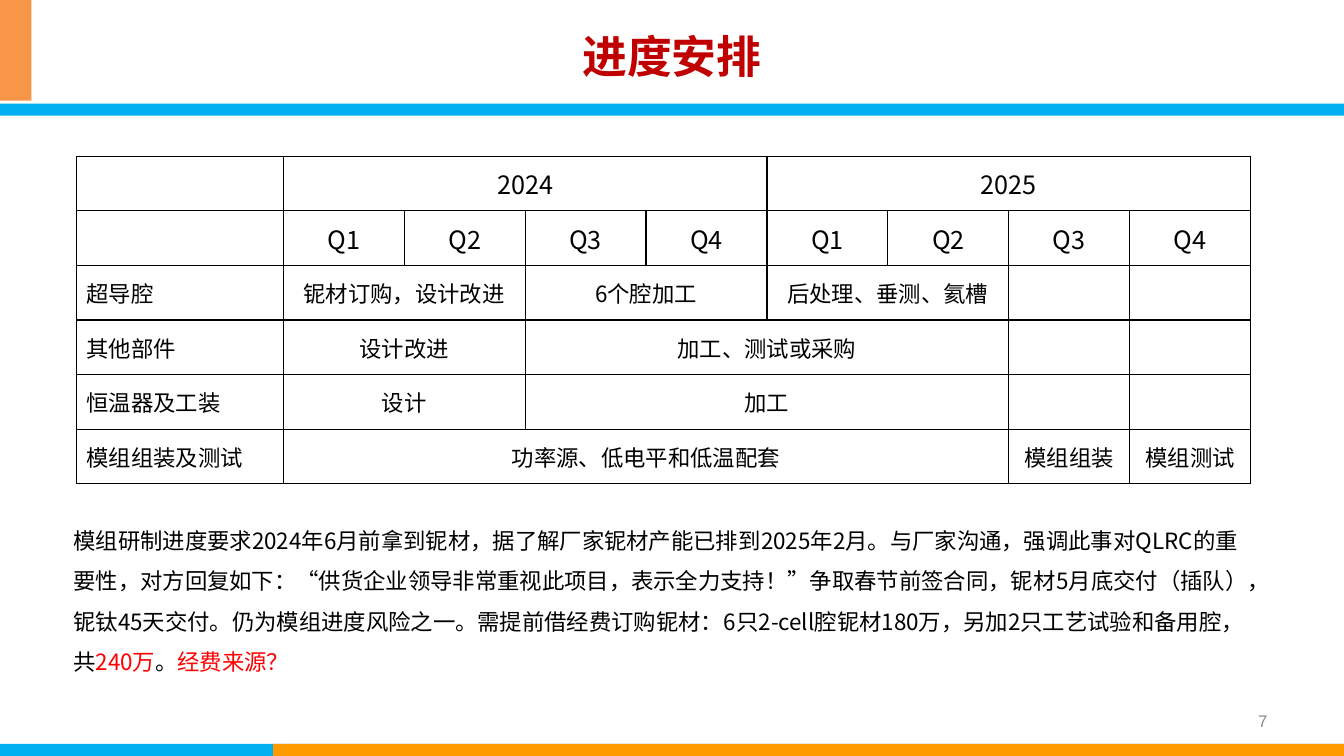
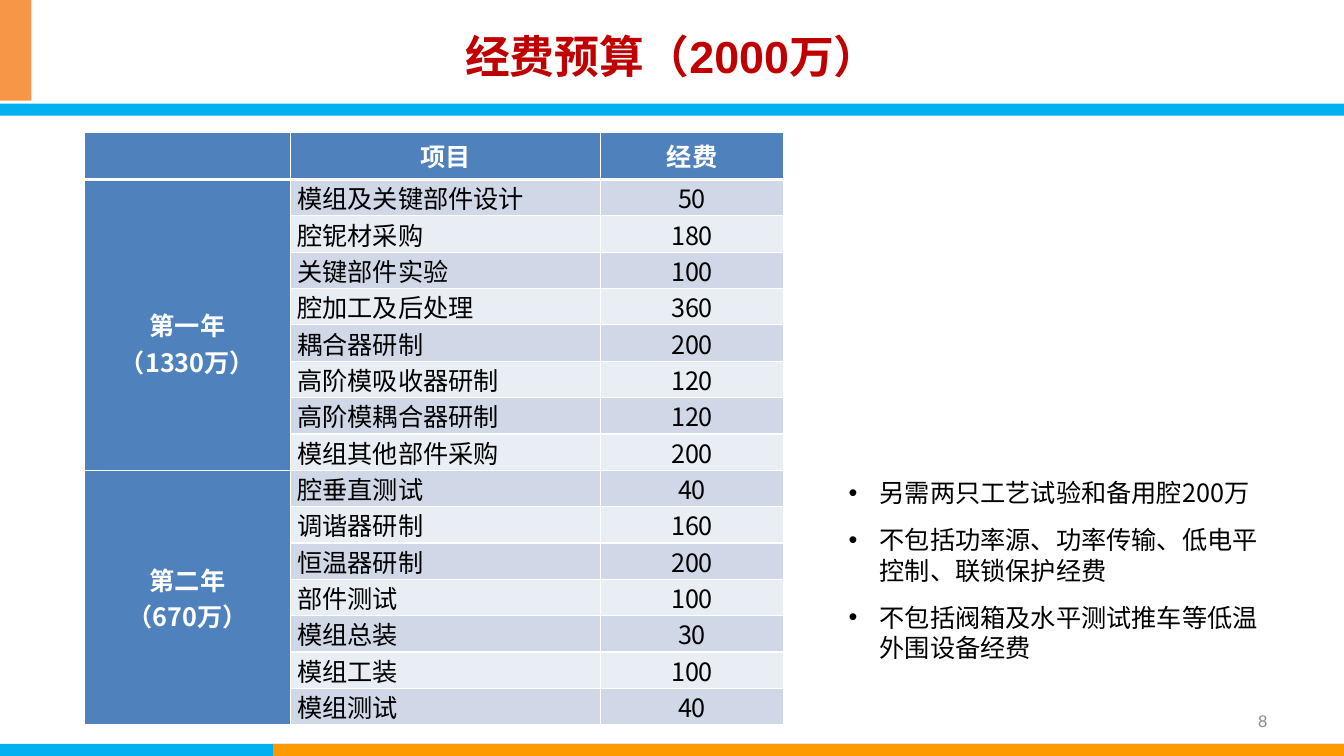
from lxml.etree import SubElement
from pptx import Presentation
from pptx.dml.color import RGBColor
from pptx.enum.shapes import MSO_SHAPE
from pptx.enum.text import MSO_ANCHOR, MSO_AUTO_SIZE, PP_ALIGN
from pptx.oxml import parse_xml
from pptx.oxml.ns import nsdecls, qn
from pptx.util import Inches, Pt

W, H = Inches(13.333), Inches(7.5)
BODY, HEAD = "Noto Sans CJK SC", "Arial"
COLORS = {
    "sky": "00B0F0", "amber": "FF9900", "corner": "F79646",
    "title": "C00000", "page": "8C8C8C", "alert": "FF0000",
    "black": "000000", "white": "FFFFFF",
    "header": "4F81BD", "odd": "D0D8E8", "even": "E9EDF4",
}
# Left, top, width, height in percent of the slide
BANDS = [
    ("sky", (0, 98.4, 100, 1.6)),
    ("amber", (20.33, 98.4, 79.67, 1.6)),
    ("sky", (0, 13.7, 100, 1.6)),
    ("corner", (0, 0, 2.33, 13.33)),
]
TITLE_BOX = (0, 2.13, 100, 10.53)
PAGE_BOX = (71.7, 92.67, 23.33, 5.33)

# Each cell of the schedule is (text, columns spanned)
SCHEDULE = [
    [("", 1), ("2024", 4), ("2025", 4)],
    [("", 1)] + [(f"Q{q}", 1) for q in (1, 2, 3, 4)] * 2,
    [("超导腔", 1), ("铌材订购，设计改进", 2), ("6个腔加工", 2),
     ("后处理、垂测、氦槽", 2), ("", 1), ("", 1)],
    [("其他部件", 1), ("设计改进", 2), ("加工、测试或采购", 4), ("", 1), ("", 1)],
    [("恒温器及工装", 1), ("设计", 2), ("加工", 4), ("", 1), ("", 1)],
    [("模组组装及测试", 1), ("功率源、低电平和低温配套", 6),
     ("模组组装", 1), ("模组测试", 1)],
]
RISK_NOTE = [
    ("模组研制进度要求2024年6月前拿到铌材，据了解厂家铌材产能已排到2025年2月。"
     "与厂家沟通，强调此事对QLRC的重要性，对方回复如下：“供货企业领导非常重视此项目，"
     "表示全力支持！”争取春节前签合同，铌材5月底交付（插队），铌钛45天交付。"
     "仍为模组进度风险之一。需提前借经费订购铌材：6只2-cell腔铌材180万，"
     "另加2只工艺试验和备用腔，共", "black"),
    ("240万", "alert"), ("。", "black"), ("经费来源？", "alert"),
]
BUDGET = {
    "第一年\n（1330万）": [
        ("模组及关键部件设计", 50), ("腔铌材采购", 180), ("关键部件实验", 100),
        ("腔加工及后处理", 360), ("耦合器研制", 200), ("高阶模吸收器研制", 120),
        ("高阶模耦合器研制", 120), ("模组其他部件采购", 200)],
    "第二年\n（670万）": [
        ("腔垂直测试", 40), ("调谐器研制", 160), ("恒温器研制", 200),
        ("部件测试", 100), ("模组总装", 30), ("模组工装", 100), ("模组测试", 40)],
}
EXCLUSIONS = [
    "另需两只工艺试验和备用腔200万",
    "不包括功率源、功率传输、低电平控制、联锁保护经费",
    "不包括阀箱及水平测试推车等低温外围设备经费",
]


def across(percent):
    return round(W * percent / 100)


def down(percent):
    return round(H * percent / 100)


def place(box):
    left, top, width, height = box
    return across(left), down(top), across(width), down(height)


def rgb(name):
    return RGBColor.from_string(COLORS[name])


def style_run(r, size, color="black", bold=False, font=BODY):
    r.font.size, r.font.bold, r.font.name = Pt(size), bold, font
    r.font.color.rgb = rgb(color)
    SubElement(r.font._element, qn("a:ea")).set("typeface", BODY)


def style_text(tf, size, align=PP_ALIGN.LEFT, **look):
    for p in tf.paragraphs:
        p.alignment = align
        for r in p.runs:
            style_run(r, size, **look)


def add_band(s, color, box):
    sp = s.shapes.add_shape(MSO_SHAPE.RECTANGLE, *place(box))
    sp.shadow.inherit = False
    sp.fill.solid()
    sp.fill.fore_color.rgb = rgb(color)
    sp.line.fill.background()


def add_textbox(s, box, text="", anchor=MSO_ANCHOR.TOP):
    tf = s.shapes.add_textbox(*place(box)).text_frame
    tf.word_wrap = True
    tf.vertical_anchor = anchor
    tf.text = text
    return tf


def add_bullet(p):
    pPr = p._p.get_or_add_pPr()
    pPr.set("marL", str(Inches(0.31)))
    pPr.set("indent", str(-Inches(0.31)))
    SubElement(pPr, qn("a:buFont")).set("typeface", HEAD)
    SubElement(pPr, qn("a:buChar")).set("char", "•")


def add_table(s, left, top, cols, rows):
    """Add a plain table; cols and rows are percent of the slide."""
    frame = s.shapes.add_table(
        len(rows), len(cols), *place((left, top, sum(cols), sum(rows))))
    table = frame.table
    table.first_row = table.horz_banding = False
    for column, share in zip(table.columns, cols):
        column.width = across(share)
    for row, share in zip(table.rows, rows):
        row.height = down(share)
    return table


def set_borders(cell, color, top=1, bottom=1):
    tcPr = cell._tc.get_or_add_tcPr()
    widths = {"lnL": 1, "lnR": 1, "lnT": top, "lnB": bottom}
    for i, (side, width) in enumerate(widths.items()):
        tcPr.insert(i, parse_xml(
            f'<a:{side} {nsdecls("a")} w="{Pt(width)}"><a:solidFill>'
            f'<a:srgbClr val="{COLORS[color]}"/></a:solidFill></a:{side}>'))


def fill_budget_cell(cell, text, fill, align=PP_ALIGN.CENTER, **look):
    cell.fill.solid()
    cell.fill.fore_color.rgb = rgb(fill)
    cell.text_frame.text = str(text)
    style_text(cell.text_frame, 18, align, **look)


def new_slide(prs, title, page):
    """Add a slide with the shared bands, title and page number."""
    s = prs.slides.add_slide(prs.slide_layouts[6])
    for color, box in BANDS:
        add_band(s, color, box)
    tf = add_textbox(s, TITLE_BOX, title, MSO_ANCHOR.MIDDLE)
    style_text(tf, 32, PP_ALIGN.CENTER, color="title", bold=True, font=HEAD)
    tf = add_textbox(s, PAGE_BOX, str(page), MSO_ANCHOR.MIDDLE)
    style_text(tf, 12, PP_ALIGN.RIGHT, color="page", font=HEAD)
    return s


def add_schedule(s):
    table = add_table(s, 5.7, 20.67, [15.38] + [9] * 8, [7.22] * len(SCHEDULE))
    for cell in table.iter_cells():
        cell.fill.background()
        set_borders(cell, "black")
        cell.vertical_anchor = MSO_ANCHOR.MIDDLE
    for i, row in enumerate(SCHEDULE):
        j = 0
        for text, span in row:
            cell = table.cell(i, j)
            if span > 1:
                cell.merge(table.cell(i, j + span - 1))
            cell.text_frame.text = text
            style_text(cell.text_frame, 18 if i < 2 else 16,
                       PP_ALIGN.CENTER if j else PP_ALIGN.LEFT)
            j += span


def add_risk_note(s):
    tf = add_textbox(s, (4.73, 67.33, 89.33, 22.27))
    tf.auto_size = MSO_AUTO_SIZE.SHAPE_TO_FIT_TEXT
    p = tf.paragraphs[0]
    p.line_spacing, p.space_after = 1.5, Pt(24)
    for text, color in RISK_NOTE:
        r = p.add_run()
        r.text = text
        style_run(r, 16, color)


def add_budget(s):
    count = sum(len(items) for items in BUDGET.values())
    rows = [6.27] + [4.81] * count
    table = add_table(s, 6.3, 17.47, [15.3, 23.1, 13.58], rows)
    for n, cell in enumerate(table.iter_cells()):
        i = n // 3
        cell.margin_left = cell.margin_right = Inches(0.07)
        cell.margin_top = cell.margin_bottom = 0
        cell.vertical_anchor = MSO_ANCHOR.MIDDLE
        set_borders(cell, "white", top=3 if i == 1 else 1,
                    bottom=1 if i else 3)
    heading = {"fill": "header", "color": "white", "bold": True}
    for j, text in enumerate(("", "项目", "经费")):
        fill_budget_cell(table.cell(0, j), text, **heading)
    i = 1
    for year, items in BUDGET.items():
        cell = table.cell(i, 0)
        cell.merge(table.cell(i + len(items) - 1, 0))
        fill_budget_cell(cell, year, **heading)
        for item, cost in items:
            fill = "odd" if i % 2 else "even"
            fill_budget_cell(table.cell(i, 1), item, fill, PP_ALIGN.JUSTIFY)
            fill_budget_cell(table.cell(i, 2), cost, fill)
            i += 1
    # The first year's label sits half a row below the middle
    table.cell(1, 0).margin_top = down(rows[1])


def add_exclusions(s):
    tf = add_textbox(s, (62.4, 62.53, 33.68, 26), "\n".join(EXCLUSIONS))
    tf.auto_size = MSO_AUTO_SIZE.SHAPE_TO_FIT_TEXT
    style_text(tf, 18)
    for p in tf.paragraphs:
        add_bullet(p)
        p.space_before = Pt(12)


def main():
    prs = Presentation()
    prs.slide_width, prs.slide_height = W, H
    s = new_slide(prs, "进度安排", 7)
    add_schedule(s)
    add_risk_note(s)
    s = new_slide(prs, "经费预算（2000万）", 8)
    add_budget(s)
    add_exclusions(s)
    prs.save("out.pptx")


if __name__ == "__main__":
    main()
